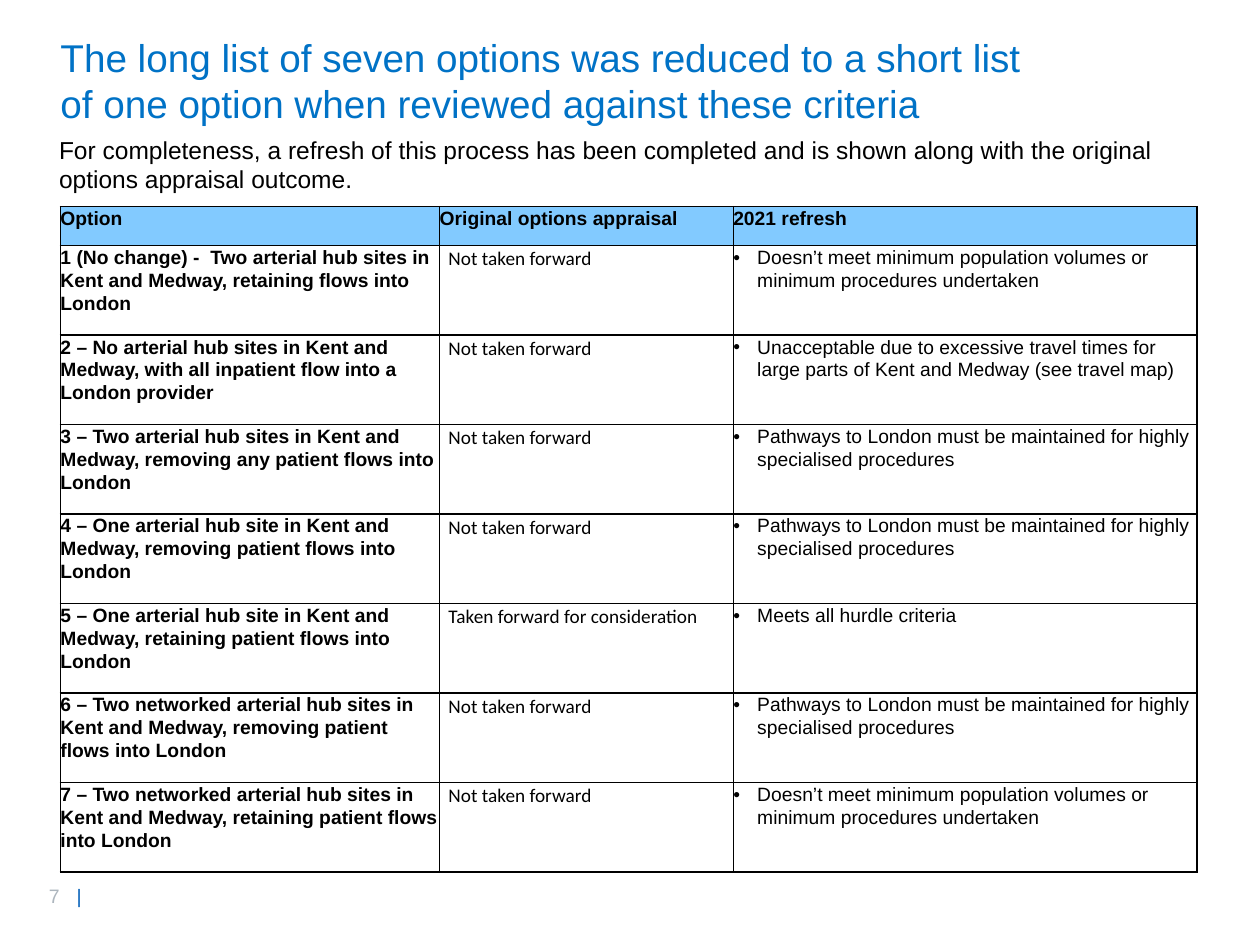
from pptx import Presentation
from pptx.dml.color import RGBColor
from pptx.enum.text import MSO_ANCHOR
from pptx.oxml.ns import qn
from pptx.util import Inches, Pt
from lxml import etree

TOP, MIDDLE = MSO_ANCHOR.TOP, MSO_ANCHOR.MIDDLE

BLACK = RGBColor(0x00, 0x00, 0x00)
WHITE = RGBColor(0xFF, 0xFF, 0xFF)
TITLE_BLUE = RGBColor(0x00, 0x72, 0xC6)
HEADER_BLUE = RGBColor(0x82, 0xCA, 0xFF)
BAR_BLUE = RGBColor(0x00, 0x5E, 0xB8)
NUMBER_GREY = RGBColor(0xAD, 0xB6, 0xBE)

NOT_FORWARD = "Not taken forward"
LOW_VOLUME = "Doesn’t meet minimum population volumes or minimum procedures undertaken"
LONDON_PATHWAYS = "Pathways to London must be maintained for highly specialised procedures"

HEADERS = ["Option", "Original options appraisal", "2021 refresh"]
OPTIONS = [
    ("1 (No change) -  Two arterial hub sites in Kent and Medway, retaining flows into London",
     NOT_FORWARD, LOW_VOLUME),
    ("2 – No arterial hub sites in Kent and Medway, with all inpatient flow into a London provider",
     NOT_FORWARD,
     "Unacceptable due to excessive travel times for large parts of Kent and Medway (see travel map)"),
    ("3 – Two arterial hub sites in Kent and Medway, removing any patient flows into London",
     NOT_FORWARD, LONDON_PATHWAYS),
    ("4 – One arterial hub site in Kent and Medway, removing patient flows into London",
     NOT_FORWARD, LONDON_PATHWAYS),
    ("5 – One arterial hub site in Kent and Medway, retaining patient flows into London",
     "Taken forward for consideration", "Meets all hurdle criteria"),
    ("6 – Two networked arterial hub sites in Kent and Medway, removing patient flows into London",
     NOT_FORWARD, LONDON_PATHWAYS),
    ("7 – Two networked arterial hub sites in Kent and Medway, retaining patient flows into London",
     NOT_FORWARD, LOW_VOLUME),
]


class SlideBuilder:
    font = "Arial"
    appraisal_font = "Calibri"
    cell_size = 11
    line_spacing = 1.07
    indent = 0.19

    def __init__(self, slide):
        self.slide = slide

    def run(self, paragraph, text, size, color, bold=False, font=None):
        run = paragraph.add_run()
        run.text = text
        run.font.name = font or self.font
        run.font.size = Pt(size)
        run.font.bold = bold
        run.font.color.rgb = color

    def text(self, box, runs, size, side_inset=0.1, anchor=TOP, tab=None):
        frame = self.slide.shapes.add_textbox(*map(Inches, box)).text_frame
        frame.word_wrap = True
        frame.vertical_anchor = anchor
        frame.margin_left = frame.margin_right = Inches(side_inset)
        paragraph = frame.paragraphs[0]
        if tab:
            stops = etree.SubElement(paragraph._p.get_or_add_pPr(), qn("a:tabLst"))
            etree.SubElement(stops, qn("a:tab"), pos=str(Inches(tab)), algn="l")
        for text, color in runs:
            self.run(paragraph, text, size, color)

    def bullet(self, paragraph):
        properties = paragraph._p.get_or_add_pPr()
        properties.set("marL", str(Inches(self.indent)))
        properties.set("indent", str(-Inches(self.indent)))
        etree.SubElement(properties, qn("a:buFont"), typeface=self.font)
        etree.SubElement(properties, qn("a:buChar"), char="•")

    def borders(self, cell):
        properties = cell._tc.get_or_add_tcPr()
        for position, side in enumerate(("lnL", "lnR", "lnT", "lnB")):
            line = etree.Element(qn(f"a:{side}"), w=str(Pt(1)))
            fill = etree.SubElement(line, qn("a:solidFill"))
            etree.SubElement(fill, qn("a:srgbClr"), val=str(BLACK))
            properties.insert(position, line)

    def cell(self, cell, text, fill, bold=False, font=None, side_inset=0, bulleted=False):
        cell.fill.solid()
        cell.fill.fore_color.rgb = fill
        cell.margin_left = cell.margin_right = Inches(side_inset)
        cell.margin_top = cell.margin_bottom = 0
        self.borders(cell)
        paragraph = cell.text_frame.paragraphs[0]
        if bulleted:
            self.bullet(paragraph)
        paragraph.line_spacing = self.line_spacing
        self.run(paragraph, text, self.cell_size, BLACK, bold, font)

    def options_table(self, left, top, widths, header_height, row_height):
        height = header_height + row_height * len(OPTIONS)
        table = self.slide.shapes.add_table(
            len(OPTIONS) + 1, len(widths), Inches(left), Inches(top),
            Inches(sum(widths)), Inches(height)).table
        table.horz_banding = False
        for column, width in zip(table.columns, widths):
            column.width = Inches(width)
        for index, row in enumerate(table.rows):
            row.height = Inches(row_height if index else header_height)

        for column, header in enumerate(HEADERS):
            self.cell(table.cell(0, column), header, HEADER_BLUE, bold=True)
        for row, (option, appraisal, refresh) in enumerate(OPTIONS, start=1):
            self.cell(table.cell(row, 0), option, WHITE, bold=True)
            self.cell(table.cell(row, 1), appraisal, WHITE,
                      font=self.appraisal_font, side_inset=0.07)
            self.cell(table.cell(row, 2), refresh, WHITE, bulleted=True)


def main():
    deck = Presentation()
    deck.slide_width, deck.slide_height = Inches(10), Inches(7.5)
    builder = SlideBuilder(deck.slides.add_slide(deck.slide_layouts[6]))

    # Page number
    builder.text((0.29, 6.97, 0.65, 0.29),
                 [("7\t", NUMBER_GREY), ("|", BAR_BLUE)], 11.1, tab=0.22)

    # Title
    builder.text((0.48, 0.18, 7.95, 0.91),
                 [("The long list of seven options was reduced to a short list "
                   "of one option when reviewed against these criteria", TITLE_BLUE)],
                 22.1, side_inset=0, anchor=MIDDLE)

    # Options table
    builder.options_table(0.48, 1.64, [3.01, 2.33, 3.68], 0.31, 0.71)

    # Introduction
    builder.text((0.37, 1.02, 9.02, 0.3),
                 [("For completeness, a refresh of this process has been completed and is "
                   "shown along with the original options appraisal outcome.", BLACK)], 14)

    deck.save("out.pptx")


if __name__ == "__main__":
    main()
